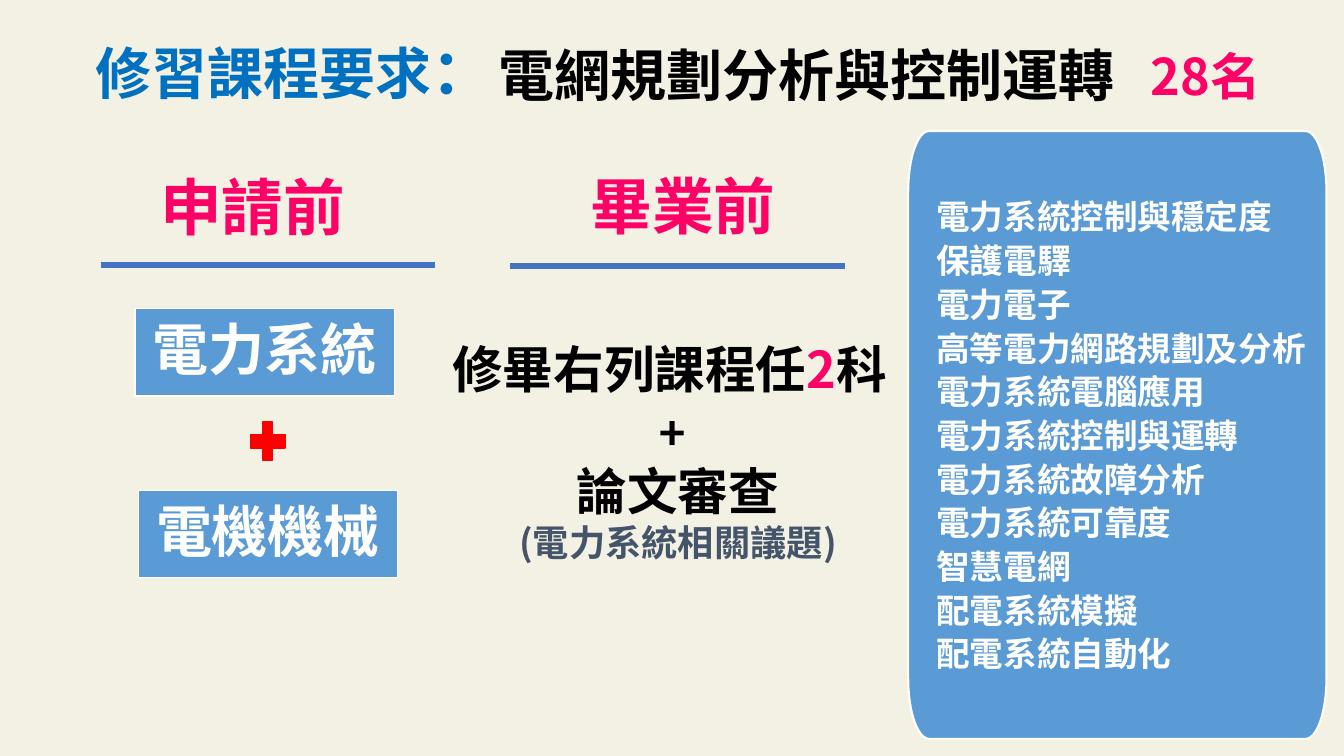
import math

from lxml import etree
from pptx import Presentation
from pptx.dml.color import RGBColor
from pptx.enum.shapes import MSO_CONNECTOR, MSO_SHAPE
from pptx.enum.text import MSO_ANCHOR, PP_ALIGN
from pptx.oxml.ns import qn
from pptx.util import Pt

MIDDLE, TOP = MSO_ANCHOR.MIDDLE, MSO_ANCHOR.TOP
LEFT, CENTER = PP_ALIGN.LEFT, PP_ALIGN.CENTER
RECTANGLE, CROSS = MSO_SHAPE.RECTANGLE, MSO_SHAPE.CROSS
STRAIGHT = MSO_CONNECTOR.STRAIGHT

FONT = "Noto Sans CJK SC"
COLORS = {
    "paper": "F3F1E3", "box": "5B9BD5", "white": "FFFFFF", "black": "000000",
    "pink": "FF0066", "title": "0070C0", "rule": "4472C4", "red": "FF0000",
    "slate": "44546A",
}
COURSES = [
    "電力系統控制與穩定度", "保護電驛", "電力電子", "高等電力網路規劃及分析",
    "電力系統電腦應用", "電力系統控制與運轉", "電力系統故障分析",
    "電力系統可靠度", "智慧電網", "配電系統模擬", "配電系統自動化",
]


def color(name):
    return RGBColor.from_string(COLORS[name])


def add_span(para, text, size=40, ink="black", font=FONT):
    span = para.add_run()
    span.text = text
    span.font.size = Pt(size)
    span.font.bold = True
    span.font.name = font
    span.font.color.rgb = color(ink)
    east_asian = etree.SubElement(span.font._element, qn("a:ea"))
    east_asian.set("typeface", FONT)


class SlideBuilder:
    def __init__(self, page):
        self.page = page
        page.background.fill.solid()
        page.background.fill.fore_color.rgb = color("paper")

    def prepare_frame(self, frame, anchor=MIDDLE, insets=(7.2, 3.6, 7.2, 3.6)):
        frame.word_wrap = True
        frame.vertical_anchor = anchor
        (frame.margin_left, frame.margin_top,
         frame.margin_right, frame.margin_bottom) = map(Pt, insets)
        return frame

    def paint(self, shape, fill, line, width):
        shape.shadow.inherit = False
        shape.fill.solid()
        shape.fill.fore_color.rgb = color(fill)
        shape.line.color.rgb = color(line)
        shape.line.width = Pt(width)

    def text(self, left, top, width, height, paras, anchor=MIDDLE):
        """Each para is (alignment, left indent, line spacing, spans)."""
        box = self.page.shapes.add_textbox(*map(Pt, (left, top, width, height)))
        frame = self.prepare_frame(box.text_frame, anchor)
        for index, (align, indent, spacing, spans) in enumerate(paras):
            para = frame.add_paragraph() if index else frame.paragraphs[0]
            para.alignment = align
            para.line_spacing = spacing
            if indent:
                para._p.get_or_add_pPr().set("marL", str(Pt(indent)))
            for words, style in spans:
                add_span(para, words, **style)

    def course_box(self, left, top, words):
        box = self.page.shapes.add_shape(
            RECTANGLE, *map(Pt, (left, top, 185.2, 62.3)))
        self.paint(box, "box", "white", 1)
        frame = self.prepare_frame(box.text_frame, insets=(1.6,) * 4)
        para = frame.paragraphs[0]
        para.alignment = CENTER
        para.line_spacing = 0.9
        add_span(para, words, ink="white")

    def plus(self, left, top, width, height):
        sign = self.page.shapes.add_shape(
            CROSS, *map(Pt, (left, top, width, height)))
        sign.adjustments[0] = 0.368
        self.paint(sign, "red", "red", 1)

    def rule(self, left, top, width):
        line = self.page.shapes.add_connector(
            STRAIGHT, *map(Pt, (left, top, left + width, top)))
        line.line.color.rgb = color("rule")
        line.line.width = Pt(4.5)
        etree.SubElement(line._element.spPr, qn("a:effectLst"))

    def panel(self, left, top, width, height, radius_x, radius_y, lines):
        # Elliptical corners, clockwise from the left end of the top left one
        steps = 12
        centers = [
            (left + radius_x, top + radius_y),
            (left + width - radius_x, top + radius_y),
            (left + width - radius_x, top + height - radius_y),
            (left + radius_x, top + height - radius_y),
        ]
        points = []
        for corner, (center_x, center_y) in enumerate(centers):
            for step in range(steps + 1):
                angle = math.pi / 2 * (corner + 2 + step / steps)
                points.append((Pt(center_x + radius_x * math.cos(angle)),
                               Pt(center_y + radius_y * math.sin(angle))))
        outline = self.page.shapes.build_freeform(*points[0], scale=1.0)
        outline.add_line_segments(points[1:], close=True)
        box = outline.convert_to_shape()
        self.paint(box, "box", "white", 1.5)
        frame = self.prepare_frame(box.text_frame, insets=(20, 6, 6, 6))
        for index, words in enumerate(lines):
            para = frame.add_paragraph() if index else frame.paragraphs[0]
            para.alignment = LEFT
            para.space_after = Pt(2.4)
            add_span(para, words, size=24, ink="white")


def main():
    deck = Presentation()
    deck.slide_width, deck.slide_height = Pt(960), Pt(540)
    slide = SlideBuilder(deck.slides.add_slide(deck.slide_layouts[6]))

    # Courses required before applying
    slide.course_box(96.5, 220.6, "電力系統")
    slide.course_box(98.8, 350.4, "電機機械")
    slide.plus(179, 301.5, 24.5, 27.5)

    # Heading
    slide.text(349.2, 23.8, 471.6, 58.3,
               [(LEFT, 0, 1, [("電網規劃分析與控制運轉", {})])])
    slide.text(61.2, 8, 300, 90, [(LEFT, 0, 0.9, [
        ("修習課程要求", {"ink": "title"}),
        ("：", {"ink": "title", "size": 44})])])
    slide.text(806.4, 28.8, 109.4, 51.1,
               [(CENTER, 0, 1, [("28名", {"size": 36, "ink": "pink"})])], TOP)

    # Elective courses
    slide.panel(648.7, 93.6, 298.8, 434.2, 15, 43.2, COURSES)

    # Requirements before graduating
    body = {"size": 36.1}
    slide.text(316.1, 220.3, 328.3, 203.8, [
        (LEFT, 0, 1, [("修畢右列課程任", body),
                      ("2", {"size": 36.1, "ink": "pink"}), ("科", body)]),
        (CENTER, 0, 1, [("+", {"size": 36.1, "font": "Calibri"})]),
        (CENTER, 8, 1, [("論文審查", body)]),
        (CENTER, 8, 1, [("(電力系統相關議題)", {"size": 25.9, "ink": "slate"})]),
    ])

    # Column headings with their rules
    columns = [("申請前", 107.3, 103.7, 72, 189.4),
               ("畢業前", 414.7, 103, 364.3, 190.1)]
    for words, left, top, rule_left, rule_top in columns:
        slide.text(left, top, 160.6, 86.4,
                   [(LEFT, 0, 1, [(words, {"size": 44, "ink": "pink"})])])
        slide.rule(rule_left, rule_top, 239)

    deck.save("out.pptx")


if __name__ == "__main__":
    main()
